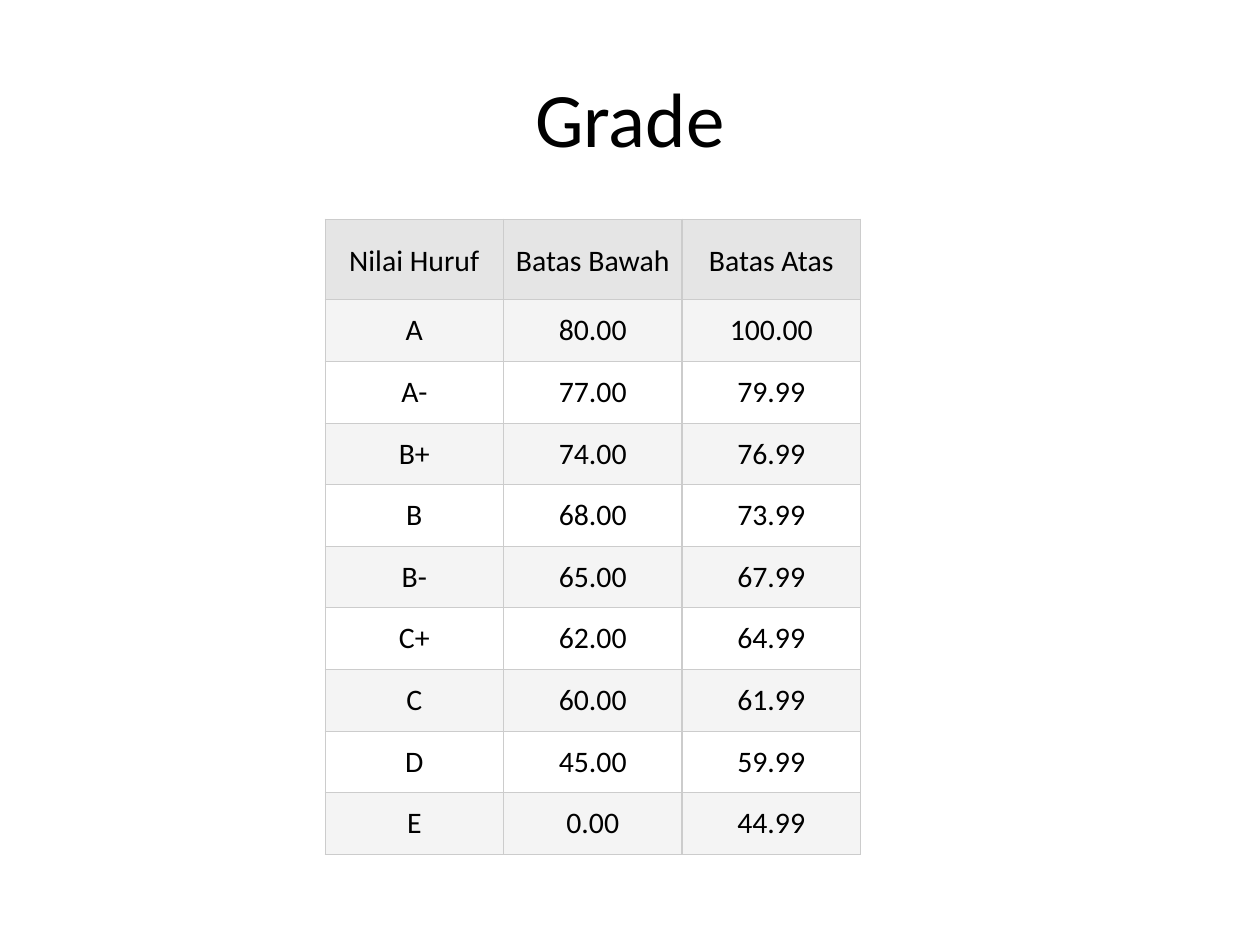
from pptx import Presentation
from pptx.dml.color import RGBColor
from pptx.enum.text import MSO_ANCHOR, PP_ALIGN
from pptx.oxml.ns import qn
from pptx.util import Inches, Pt
from lxml.etree import SubElement

FONT = "Calibri"
BLACK, HEADER_FILL, BAND_FILL, WHITE, BORDER = "000000", "E5E5E5", "F4F4F4", "FFFFFF", "CCCCCC"
HEADER_HEIGHT, GRADE_HEIGHT = 0.64, 0.48
HEADER_MARGINS = (0.03, 0.05, 0.03, 0.03)
GRADE_MARGINS = (0.1, 0.1, 0.1, 0.1)

HEADINGS = ("Nilai Huruf", "Batas Bawah", "Batas Atas")
GRADES = (
    ("A", "80.00", "100.00"),
    ("A-", "77.00", "79.99"),
    ("B+", "74.00", "76.99"),
    ("B", "68.00", "73.99"),
    ("B-", "65.00", "67.99"),
    ("C+", "62.00", "64.99"),
    ("C", "60.00", "61.99"),
    ("D", "45.00", "59.99"),
    ("E", "0.00", "44.99"),
)


def color(hex_value):
    return RGBColor.from_string(hex_value)


def write_centered(text_frame, text, size):
    text_frame.text = text
    paragraph = text_frame.paragraphs[0]
    paragraph.alignment = PP_ALIGN.CENTER
    font = paragraph.runs[0].font
    font.name, font.size = FONT, Pt(size)
    font.color.rgb = color(BLACK)


def add_borders(cell):
    properties = cell._tc.get_or_add_tcPr()
    for side in ("a:lnL", "a:lnR", "a:lnT", "a:lnB"):
        line = SubElement(properties, qn(side), w=str(Pt(0.75)))
        fill = SubElement(line, qn("a:solidFill"))
        SubElement(fill, qn("a:srgbClr"), val=BORDER)


def format_cell(cell, text, fill, margins, anchor):
    write_centered(cell.text_frame, text, 17)
    cell.margin_left, cell.margin_top, cell.margin_right, cell.margin_bottom = map(Inches, margins)
    cell.vertical_anchor = anchor
    add_borders(cell)
    cell.fill.solid()
    cell.fill.fore_color.rgb = color(fill)


def place_title(slide, left, top, width, height):
    title = slide.shapes.title
    title.left, title.top, title.width, title.height = map(Inches, (left, top, width, height))
    write_centered(title.text_frame, "Grade", 44)
    title.text_frame.vertical_anchor = MSO_ANCHOR.MIDDLE


def add_grade_table(slide, left, top, width):
    height = HEADER_HEIGHT + GRADE_HEIGHT * len(GRADES)
    table = slide.shapes.add_table(
        len(GRADES) + 1, len(HEADINGS), *map(Inches, (left, top, width, height))
    ).table
    for column in table.columns:
        column.width = Inches(width / len(HEADINGS))
    for row_index, values in enumerate((HEADINGS, *GRADES)):
        if row_index == 0:
            row_height, fill = HEADER_HEIGHT, HEADER_FILL
            margins, anchor = HEADER_MARGINS, MSO_ANCHOR.MIDDLE
        else:
            row_height, fill = GRADE_HEIGHT, BAND_FILL if row_index % 2 else WHITE
            margins, anchor = GRADE_MARGINS, MSO_ANCHOR.TOP
        row = table.rows[row_index]
        row.height = Inches(row_height)
        for cell, value in zip(row.cells, values):
            format_cell(cell, value, fill, margins, anchor)


def main():
    presentation = Presentation()
    presentation.slide_width, presentation.slide_height = Inches(10), Inches(7.5)
    slide = presentation.slides.add_slide(presentation.slide_layouts[5])
    place_title(slide, 0.5, 0.3, 9, 1.25)
    add_grade_table(slide, 2.58, 1.74, 4.25)
    presentation.save("out.pptx")


if __name__ == "__main__":
    main()
